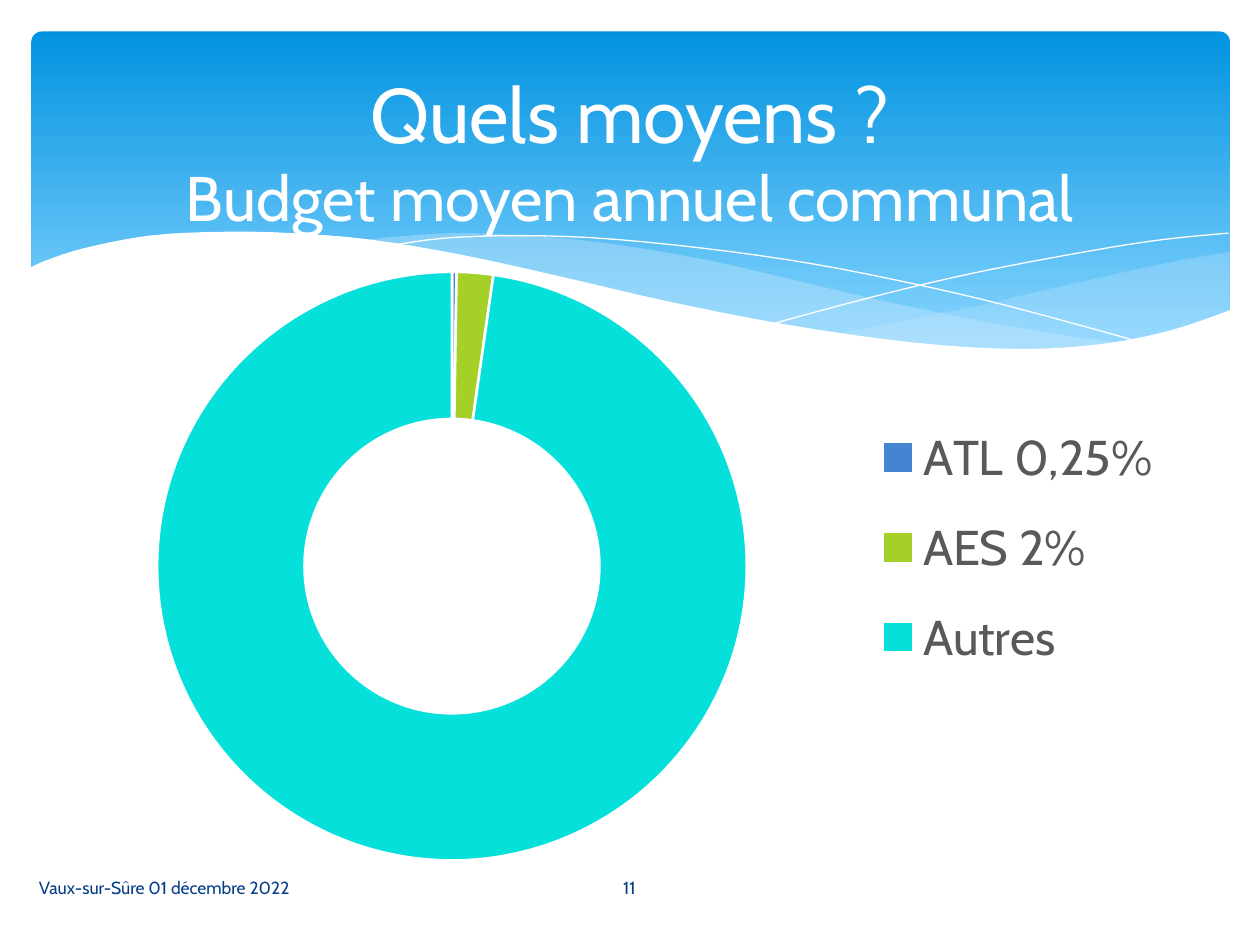
from lxml.etree import SubElement
from pptx import Presentation
from pptx.chart.data import CategoryChartData
from pptx.dml.color import RGBColor
from pptx.enum.chart import XL_CHART_TYPE, XL_LEGEND_POSITION
from pptx.enum.shapes import MSO_SHAPE
from pptx.enum.text import MSO_ANCHOR, PP_ALIGN
from pptx.oxml import parse_xml
from pptx.oxml.ns import nsdecls, qn
from pptx.util import Inches, Pt

# A grid of 100 columns by 75 rows; boxes are (column, row, columns, rows).
UNIT = Inches(0.1)
FONT = "Cabin"
WHITE = "FFFFFF"
NAVY = "073E87"

HEADER_BOX = (2.5, 2.5, 95.1, 27)
TITLE_BOX = (5, 3.7, 90, 16.5)
CHART_BOX = (5.2, 18.6, 88.9, 49.8)
DATE_BOX = (2.1, 68.4, 41.4, 4)
NUMBER_BOX = (43.6, 68.4, 12.7, 4)

# Wave outlines, as columns and rows from the header's top left corner.
RIGHT_SWELL = [
    [(95.1, 17.5), (91, 18.2), (83.6, 19.8), (75.4, 21.7), (68.1, 23.2), (63.6, 24)],
    [(63.6, 24), (69.4, 24.7), (74.4, 25.2), (78.9, 25.3), (83.8, 25), (88, 24.4),
     (91.7, 23.4), (95.1, 22.2)],
]
MIDDLE_SWELL = [
    [(86.8, 24.8), (78.2, 23.5), (68.1, 21.5), (60.4, 19.7), (54.4, 18.3), (48.9, 17.3),
     (44, 16.6), (39.5, 16.2), (33.6, 16), (28.8, 16.3), (26.1, 16.6)],
    [(26.1, 16.6), (31.7, 17.4), (37.9, 18.6), (46.6, 20.7), (54.1, 22.3), (62.5, 23.9),
     (69.7, 24.9), (76, 25.3), (81.3, 25.3), (86.8, 24.8)],
]
FALLING_LINE = [
    [(28.4, 17), (32.8, 16.4), (39.1, 16.2), (46.4, 16.5), (55.7, 17.5), (64, 18.8),
     (73.5, 20.8), (80.6, 22.6), (88.2, 24.7)],
]
RISING_LINE = [
    [(58.8, 23.2), (67, 21), (75.1, 19.1), (84.1, 17.4), (89.9, 16.5), (95, 16)],
]
WHITE_WAVE = [
    [(95.2, 22.1), (90.5, 23.7), (85, 24.8), (78.4, 25.2), (70.1, 24.7), (60.1, 23.3),
     (50.4, 21.4), (42.2, 19.5), (34, 17.7), (26.7, 16.5), (20.5, 16), (15.2, 15.9),
     (9.4, 16.2), (4.2, 17.2), (1.1, 18.2), (-0.2, 18.8)],
    [(-0.2, 30.4), (95.2, 30.4)],
]


def rgb(value):
    return RGBColor.from_string(value)


def grid(*lengths):
    return [round(length * UNIT) for length in lengths]


def set_format(target, values):
    for name, value in values.items():
        setattr(target, name, value)


def set_font(font, size, color):
    set_format(font, {"name": FONT, "size": Pt(size), "bold": False})
    font.color.rgb = rgb(color)


def smooth_curve(knots, steps=4):
    """Catmull-Rom points through the knots."""
    padded = [knots[0], *knots, knots[-1]]
    points = [knots[0]]
    for a, b, c, d in zip(padded, padded[1:], padded[2:], padded[3:]):
        for step in range(1, steps + 1):
            t = step / steps
            points.append(tuple(
                (2 * q + (r - p) * t + (2 * p - 5 * q + 4 * r - s) * t ** 2
                 + (3 * q - p - 3 * r + s) * t ** 3) / 2
                for p, q, r, s in zip(a, b, c, d)))
    return points


def add_wave(page, box, curves, fill=None, opacity=100):
    """A filled wave, or an open white hairline when there is no fill."""
    points = [grid(box[0] + x, box[1] + y)
              for knots in curves for x, y in smooth_curve(knots)]
    builder = page.shapes.build_freeform(*points[0])
    builder.add_line_segments(points[1:], close=fill is not None)
    wave = builder.convert_to_shape()
    wave.shadow.inherit = False
    if fill is None:
        wave.fill.background()
        wave.line.color.rgb = rgb(WHITE)
        wave.line.width = Pt(0)
        return
    wave.fill.solid()
    wave.fill.fore_color.rgb = rgb(fill)
    wave.line.fill.background()
    if opacity < 100:
        color = wave.fill._xPr.find(qn("a:solidFill"))[0]
        SubElement(color, qn("a:alpha"), val=str(opacity * 1000))


def add_header(page, box):
    panel = page.shapes.add_shape(MSO_SHAPE.ROUNDED_RECTANGLE, *grid(*box))
    panel.adjustments[0] = 0.03
    panel.shadow.inherit = False
    panel.line.fill.background()
    panel.fill.gradient()
    panel.fill.gradient_angle = 270
    for stop, (position, color) in zip(panel.fill.gradient_stops,
                                       [(0, "0293E0"), (0.9, "83D3FE")]):
        stop.position = position
        stop.color.rgb = rgb(color)
    add_wave(page, box, RIGHT_SWELL, "C6E7FC", 29)
    add_wave(page, box, MIDDLE_SWELL, "C6E7FC", 40)
    add_wave(page, box, FALLING_LINE)
    add_wave(page, box, RISING_LINE)
    add_wave(page, box, WHITE_WAVE, WHITE)


def add_text(page, box, lines, color, align):
    """One paragraph whose (text, size) lines are split by line breaks."""
    frame = page.shapes.add_textbox(*grid(*box)).text_frame
    set_format(frame, {"word_wrap": True, "vertical_anchor": MSO_ANCHOR.MIDDLE})
    para = frame.paragraphs[0]
    para.alignment = align
    for index, (text, size) in enumerate(lines):
        if index:
            para.add_line_break()
        span = para.add_run()
        span.text = text
        set_font(span.font, size, color)


def manual_layout(x, y, width, height, inner=False):
    target = '<c:layoutTarget val="inner"/>' if inner else ""
    return parse_xml(
        f'<c:layout {nsdecls("c")}><c:manualLayout>{target}'
        '<c:xMode val="edge"/><c:yMode val="edge"/>'
        f'<c:x val="{x}"/><c:y val="{y}"/><c:w val="{width}"/><c:h val="{height}"/>'
        '</c:manualLayout></c:layout>')


def replace_layout(parent, layout, index):
    for old in parent.findall(qn("c:layout")):
        parent.remove(old)
    parent.insert(index, layout)


def add_budget_chart(page, box):
    data = CategoryChartData()
    data.categories = ["ATL 0,25%", "AES 2%", "Autres"]
    data.add_series("Series 1", [0.25, 2, 98])
    chart = page.shapes.add_chart(XL_CHART_TYPE.DOUGHNUT, *grid(*box), data).chart
    set_format(chart, {"has_title": False, "has_legend": True})
    set_font(chart.font, 10, "000000")
    set_format(chart.legend, {"position": XL_LEGEND_POSITION.RIGHT,
                              "include_in_layout": False})
    set_font(chart.legend.font, 28, "595959")

    plot = chart.plots[0]
    plot.vary_by_categories = True
    plot._element.find(qn("c:holeSize")).set("val", "75")
    for index, color in enumerate(["4584D3", "A5D028", "05E0DB"]):
        slice_format = plot.series[0].points[index].format
        slice_format.fill.solid()
        slice_format.fill.fore_color.rgb = rgb(color)
        slice_format.line.color.rgb = rgb(WHITE)
        slice_format.line.width = Pt(1.5)

    plot_area = chart._chartSpace.chart.plotArea
    replace_layout(plot_area, manual_layout(0.06, 0.06, 0.57, 0.94, inner=True), 0)
    replace_layout(chart.legend._element, manual_layout(0.71, 0.26, 0.28, 0.48), 1)


def build_slide(deck):
    page = deck.slides.add_slide(deck.slide_layouts[6])
    add_header(page, HEADER_BOX)
    add_text(page, TITLE_BOX,
             [("Quels moyens ?", 44), ("Budget moyen annuel communal", 36)],
             WHITE, PP_ALIGN.CENTER)
    add_text(page, DATE_BOX, [("Vaux-sur-Sûre 01 décembre 2022", 10)],
             NAVY, PP_ALIGN.LEFT)
    add_budget_chart(page, CHART_BOX)
    add_text(page, NUMBER_BOX, [("11", 10)], NAVY, PP_ALIGN.CENTER)


def main():
    deck = Presentation()
    set_format(deck, {"slide_width": 100 * UNIT, "slide_height": 75 * UNIT})
    build_slide(deck)
    deck.save("out.pptx")


if __name__ == "__main__":
    main()
